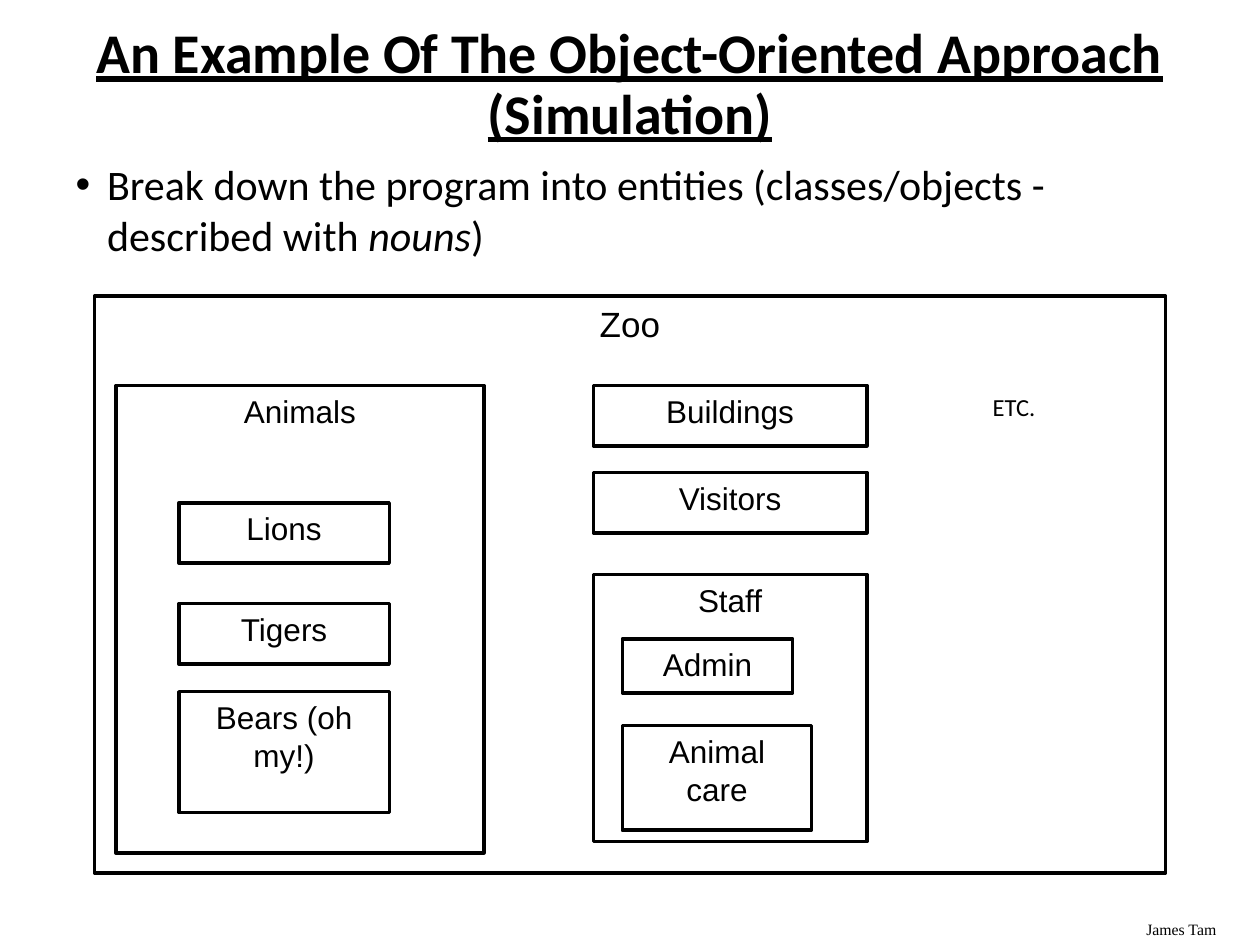
"""Build the zoo simulation slide that introduces object-oriented entities."""
from pptx import Presentation
from pptx.dml.color import RGBColor
from pptx.enum.shapes import MSO_SHAPE as Preset
from pptx.enum.text import MSO_ANCHOR as Anchor, MSO_AUTO_SIZE as AutoSize, PP_ALIGN as Align
from pptx.util import Inches, Pt

INK = "000000"
WIDTH, HEIGHT = 10, 7.5
TITLE = "An Example Of The Object-Oriented Approach (Simulation)"
BULLET = [
    ("Break down the program into entities (classes/objects - described with ", False),
    ("nouns", True),
    (")", False),
]
ZOO = ("Zoo", 0.75, 2.35, 8.5, 4.58)
COLUMNS = [
    (0.92, 2.92, [("Animals", 3.06, 3.71)]),
    (1.42, 1.67, [("Lions", 3.99, 0.48), ("Tigers", 4.79, 0.48), ("Bears (oh my!)", 5.49, 0.96)]),
    (4.71, 2.17, [("Buildings", 3.06, 0.48), ("Visitors", 3.75, 0.48), ("Staff", 4.56, 2.12)]),
    (4.94, 1.35, [("Admin", 5.07, 0.43)]),
    (4.94, 1.5, [("Animal\ncare", 5.76, 0.83)]),
]
LABELS = [
    ("ETC.", 7.78, 3.06, 1.25, 0.33, "Calibri", 14),
    ("James Tam", 9, 7.25, 1, 0.25, "Times New Roman", 9),
]


def color(value):
    return RGBColor.from_string(value)


def add_run(paragraph, text, font, size, bold=False, italic=False, underline=False):
    run = paragraph.add_run()
    run.text = text
    run.font.name, run.font.size = font, Pt(size)
    run.font.bold, run.font.italic, run.font.underline = bold, italic, underline
    run.font.color.rgb = color(INK)


def place(holder, left, top, width, height, anchor):
    holder.left, holder.top = Inches(left), Inches(top)
    holder.width, holder.height = Inches(width), Inches(height)
    frame = holder.text_frame
    frame.auto_size, frame.word_wrap = AutoSize.NONE, True
    frame.vertical_anchor = anchor
    return frame.paragraphs[0]


def add_entity(slide, name, left, top, width, height, size=18):
    entity = slide.shapes.add_shape(
        Preset.RECTANGLE, Inches(left), Inches(top), Inches(width), Inches(height))
    entity.shadow.inherit = False
    entity.fill.background()
    entity.line.color.rgb = color(INK)
    entity.line.width = Pt(2)
    frame = entity.text_frame
    frame.word_wrap, frame.vertical_anchor = True, Anchor.TOP
    for index, line in enumerate(name.split("\n")):
        paragraph = frame.add_paragraph() if index else frame.paragraphs[0]
        paragraph.alignment = Align.CENTER
        add_run(paragraph, line, "Arial", size)


def add_label(slide, text, left, top, width, height, font, size):
    label = slide.shapes.add_textbox(Inches(left), Inches(top), Inches(width), Inches(height))
    label.text_frame.word_wrap = True
    add_run(label.text_frame.paragraphs[0], text, font, size)


def main():
    deck = Presentation()
    deck.slide_width, deck.slide_height = Inches(WIDTH), Inches(HEIGHT)
    slide = deck.slides.add_slide(deck.slide_layouts[1])

    heading = place(slide.shapes.title, 0.5, 0.33, 9, 0.7, Anchor.MIDDLE)
    heading.alignment, heading.line_spacing = Align.CENTER, 0.9
    add_run(heading, TITLE, "Calibri", 32, bold=True, underline=True)

    point = place(slide.placeholders[1], 0.5, 1.21, 8.94, 5.87, Anchor.TOP)
    point.space_before = Pt(7.2)
    properties = point._p.get_or_add_pPr()
    properties.set("marL", str(Inches(0.25)))
    properties.set("indent", str(-Inches(0.25)))
    for text, italic in BULLET:
        add_run(point, text, "Calibri", 24, italic=italic)

    add_entity(slide, *ZOO, size=20)
    for left, width, entities in COLUMNS:
        for name, top, height in entities:
            add_entity(slide, name, left, top, width, height)
    for label in LABELS:
        add_label(slide, *label)

    deck.save("out.pptx")


if __name__ == "__main__":
    main()
